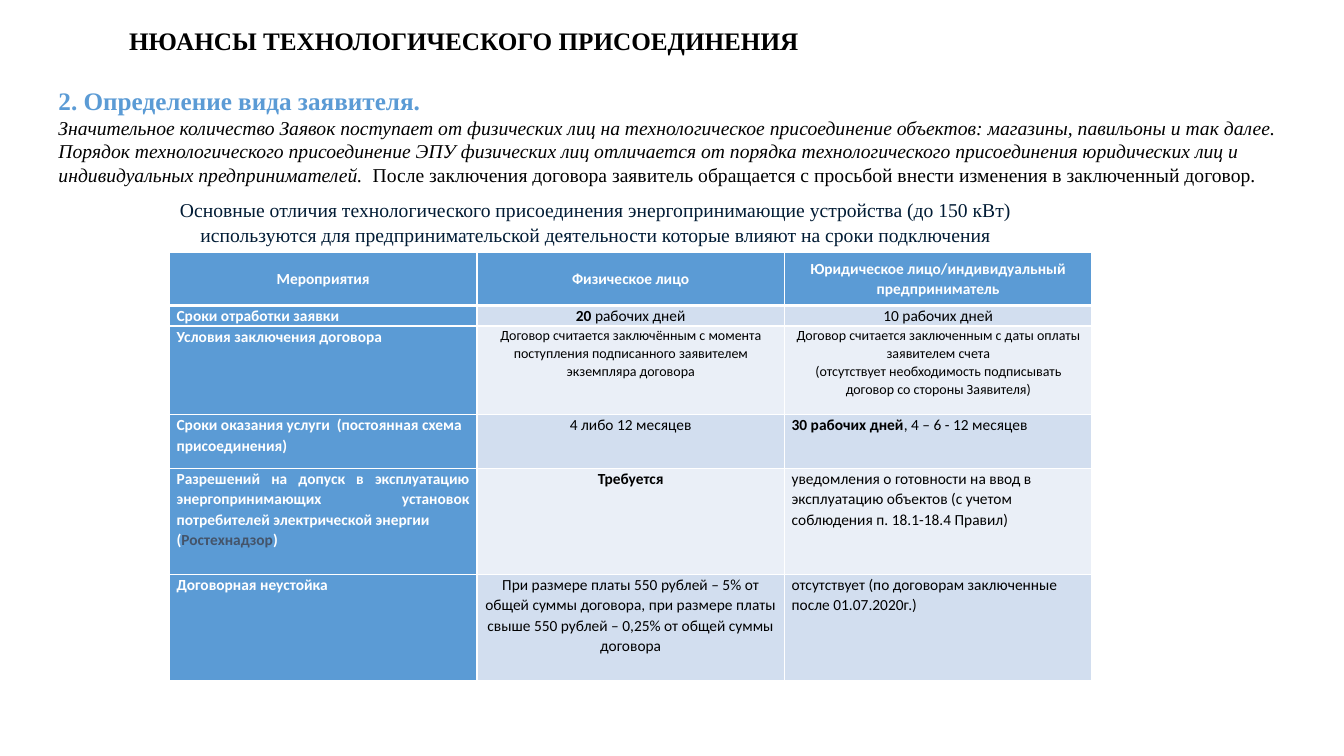
import pptx
import pptx.util
import pptx.dml.color
import pptx.enum.text
import pptx.oxml
import pptx.oxml.ns

Cm = pptx.util.Cm
Pt = pptx.util.Pt
ALIGN = pptx.enum.text.PP_ALIGN
L, C, J = ALIGN.LEFT, ALIGN.CENTER, ALIGN.JUSTIFY
SERIF, SANS = "Times New Roman", "Calibri"
BLUE, WHITE, BLACK, NAVY, SLATE = "5B9BD5", "FFFFFF", "000000", "001B34", "44546A"
BANDS = ["EAEFF7", "D2DEEF"]


def paint(hue):
    return pptx.dml.color.RGBColor.from_string(hue)


def write(frame, font, paras, lead=1.0):
    """Fill a frame; each item is (align, runs), each run (text, size, colour, style)."""
    frame.word_wrap = True
    frame.auto_size = pptx.enum.text.MSO_AUTO_SIZE.NONE
    for i, (align, runs) in enumerate(paras):
        para = frame.add_paragraph() if i else frame.paragraphs[0]
        para.alignment = align
        para.line_spacing = lead
        para.space_before = para.space_after = Pt(0)
        for text, size, hue, style in runs:
            run = para.add_run()
            run.text = text
            run.font.name = font
            run.font.size = Pt(size)
            run.font.bold = style == "b"
            run.font.italic = style == "i"
            run.font.color.rgb = paint(hue)


deck = pptx.Presentation()
deck.slide_width, deck.slide_height = Cm(33.87), Cm(19.05)
slide = deck.slides.add_slide(deck.slide_layouts[1])

# Title
title = slide.shapes.title
title.left, title.top, title.width, title.height = Cm(3), Cm(0.5), Cm(20), Cm(1)
title.text_frame.vertical_anchor = pptx.enum.text.MSO_ANCHOR.TOP
write(title.text_frame, SERIF, [
    (L, [("НЮАНСЫ ТЕХНОЛОГИЧЕСКОГО ПРИСОЕДИНЕНИЯ", 18, BLACK, "b")])])

# Section heading and introduction
body = slide.placeholders[1]
body.left, body.top, body.width, body.height = Cm(1.22), Cm(2.03), Cm(31.34), Cm(2.82)
write(body.text_frame, SERIF, [
    (L, [("2. Определение вида заявителя.", 18, BLUE, "b")]),
    (L, [("Значительное количество Заявок поступает от физических лиц на "
          "технологическое присоединение объектов: магазины, павильоны и так далее. "
          "Порядок технологического присоединение ЭПУ физических лиц отличается от "
          "порядка технологического присоединения юридических лиц и "
          "индивидуальных предпринимателей.  ", 14, BLACK, "i"),
         ("После заключения договора заявитель обращается с просьбой внести "
          "изменения в заключенный договор.", 14, BLACK, "")])])
for para in body.text_frame.paragraphs:
    props = para._p.get_or_add_pPr()
    props.set("marL", "0")
    props.set("indent", "0")
    props.append(pptx.oxml.parse_xml(
        f"<a:buNone {pptx.oxml.ns.nsdecls('a')}/>"))

# Table caption
note = slide.shapes.add_textbox(Cm(3.84), Cm(4.83), Cm(22.35), Cm(1.5))
write(note.text_frame, SERIF, [
    (C, [("Основные отличия технологического присоединения энергопринимающие "
          "устройства (до 150 кВт) используются для предпринимательской "
          "деятельности которые влияют на сроки подключения", 14, NAVY, "")])], 1.07)

# Table: each cell is a list of paragraphs
rows = [
    [[(C, [(text, 11, WHITE, "b")])] for text in (
        "Мероприятия", "Физическое лицо",
        "Юридическое лицо/индивидуальный предприниматель")],
    [[(L, [("Сроки отработки заявки", 11, WHITE, "b")])],
     [(C, [("20", 11, BLACK, "b"), (" рабочих дней", 11, BLACK, "")])],
     [(C, [("10 рабочих дней", 11, BLACK, "")])]],
    [[(L, [("Условия заключения договора", 11, WHITE, "b")])],
     [(C, [("Договор считается заключённым с момента поступления подписанного "
            "заявителем экземпляра договора", 10, BLACK, "")])],
     [(C, [("Договор считается заключенным с даты оплаты заявителем счета",
            10, BLACK, "")]),
      (C, [("(отсутствует необходимость подписывать договор со стороны Заявителя)",
            10, BLACK, "")])]],
    [[(L, [("Сроки оказания услуги  (постоянная схема присоединения)",
            11, WHITE, "b")])],
     [(C, [("4 либо 12 месяцев", 11, BLACK, "")])],
     [(L, [("30 рабочих дней", 11, BLACK, "b"),
           (", 4 – 6 - 12 месяцев", 11, BLACK, "")])]],
    [[(J, [("Разрешений на допуск в эксплуатацию энергопринимающих установок "
            "потребителей электрической энергии", 11, WHITE, "b")]),
      (L, [("(", 11, WHITE, "b"), ("Ростехнадзор", 11, SLATE, "b"),
           (")", 11, WHITE, "b")])],
     [(C, [("Требуется", 11, BLACK, "b")])],
     [(L, [("уведомления о готовности на ввод в эксплуатацию объектов "
            "(с учетом соблюдения п. 18.1-18.4 Правил)", 11, BLACK, "")])]],
    [[(J, [("Договорная неустойка", 11, WHITE, "b")])],
     [(C, [("При размере платы 550 рублей – 5% от общей суммы договора, "
            "при размере платы свыше 550 рублей – 0,25% от общей суммы договора",
            11, BLACK, "")])],
     [(L, [("отсутствует (по договорам заключенные после 01.07.2020г.)",
            11, BLACK, "")])]],
]
highs = [1.35, 0.46, 2.24, 1.35, 2.67, 2.67]
grid = slide.shapes.add_table(
    len(rows), 3, Cm(4.27), Cm(6.35), Cm(23.25), Cm(sum(highs))).table
for col in grid.columns:
    col.width = Cm(7.75)

for r, (high, row) in enumerate(zip(highs, rows)):
    grid.rows[r].height = Cm(high)
    for c, paras in enumerate(row):
        cell = grid.cell(r, c)
        cell.margin_left = cell.margin_right = Cm(0.18)
        cell.margin_top = cell.margin_bottom = Cm(0)
        cell.vertical_anchor = (pptx.enum.text.MSO_ANCHOR.TOP if r
                                else pptx.enum.text.MSO_ANCHOR.MIDDLE)
        write(cell.text_frame, SANS, paras, 1.07)
        cell.fill.solid()
        cell.fill.fore_color.rgb = paint(BANDS[r % 2] if r and c else BLUE)
        for i, side in enumerate("LRTB"):
            thick = (r, side) in [(0, "B"), (1, "T")]
            cell._tc.tcPr.insert(i, pptx.oxml.parse_xml(
                f'<a:ln{side} {pptx.oxml.ns.nsdecls("a")} w="{Pt(3 if thick else 1)}">'
                f'<a:solidFill><a:srgbClr val="{WHITE}"/></a:solidFill></a:ln{side}>'))

deck.save("out.pptx")
